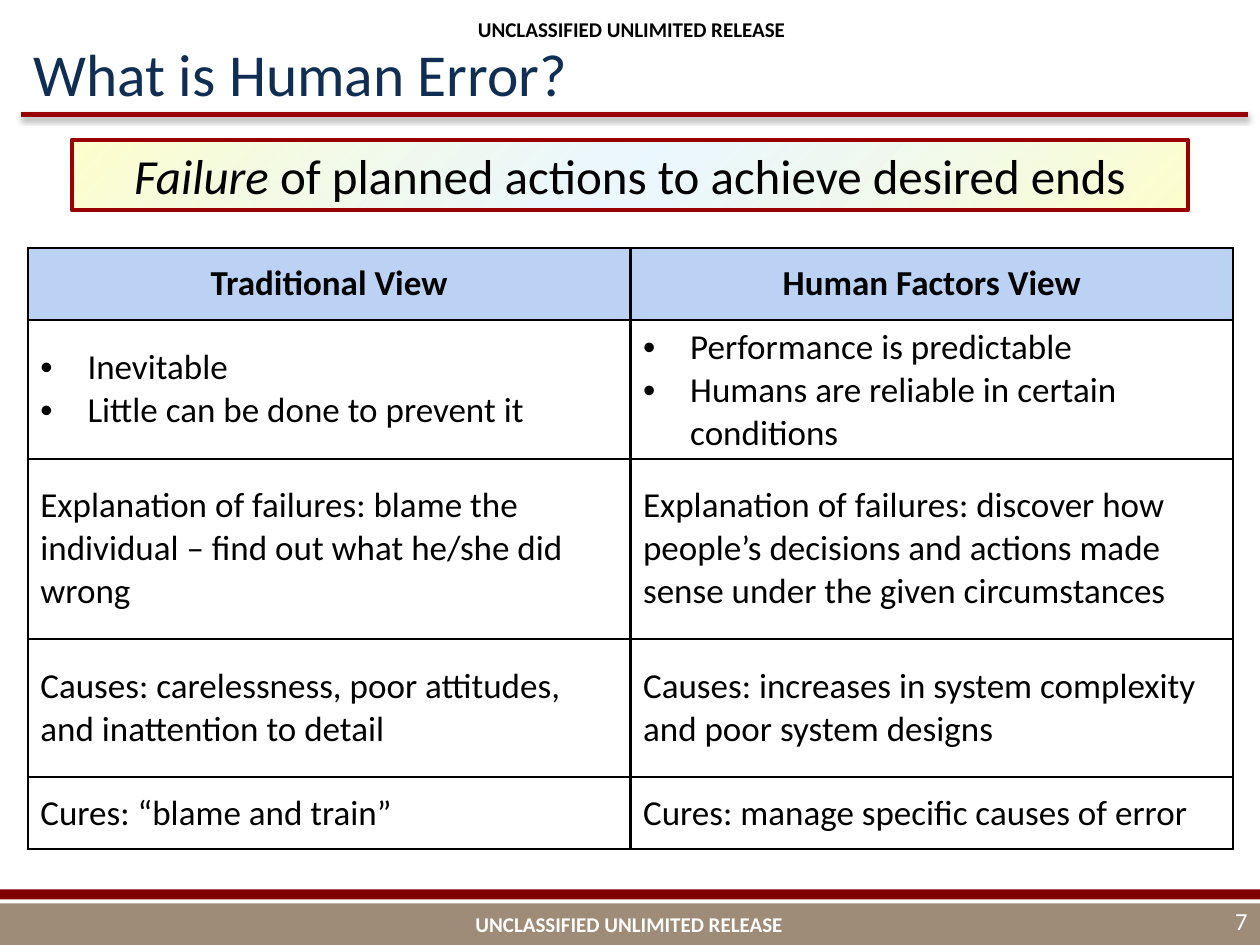
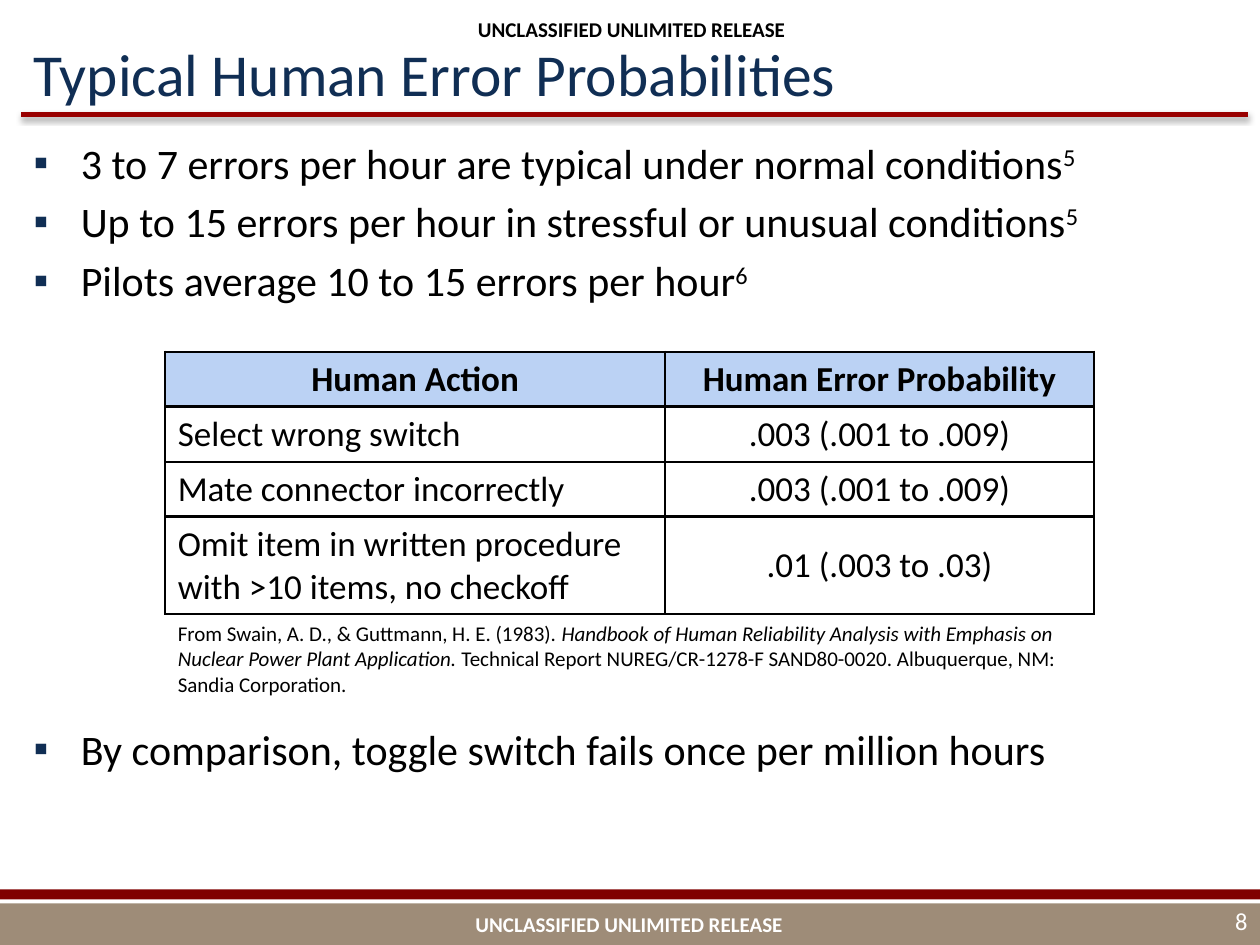
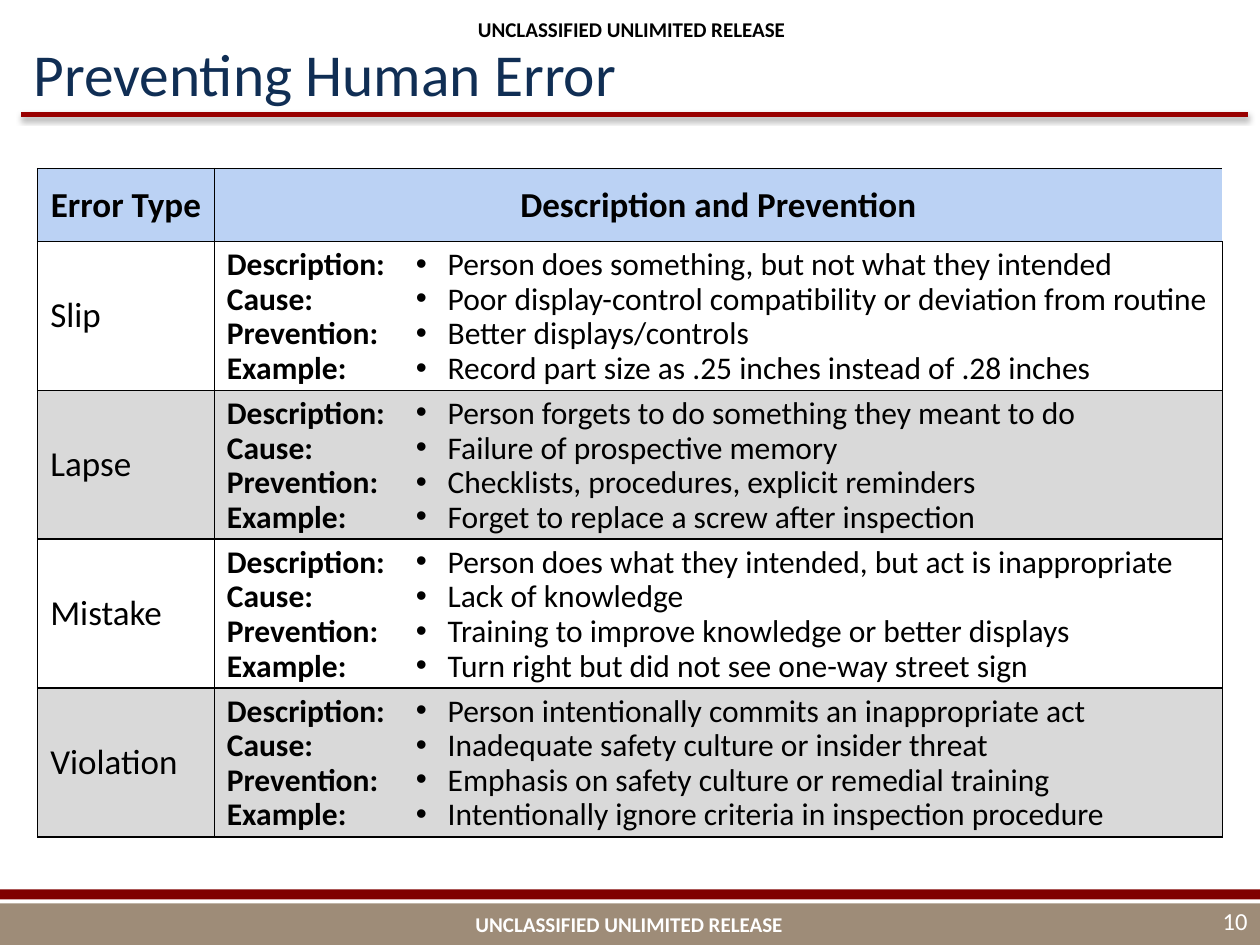
import dataclasses

import lxml.etree
import pptx
import pptx.dml.color
import pptx.enum.shapes
import pptx.enum.text
import pptx.oxml.ns
import pptx.util

Cm = pptx.util.Cm
Pt = pptx.util.Pt
ALIGN = pptx.enum.text.PP_ALIGN
ANCHOR = pptx.enum.text.MSO_ANCHOR
SHAPE = pptx.enum.shapes.MSO_SHAPE
EDGES = "LRTB"


@dataclasses.dataclass(frozen=True)
class Theme:
    """Hold the colours, font and type sizes of the deck."""
    font: str = "Calibri"
    navy: str = "102E54"
    black: str = "000000"
    white: str = "FFFFFF"
    tan: str = "9E8C78"
    maroon: str = "800000"
    red: str = "990000"
    header: str = "BBD2F4"
    gray: str = "D9D9D9"
    cream: str = "FFFFCC"
    sky: str = "E1F4FF"
    title: int = 34
    banner: int = 28
    body: int = 24
    table: int = 20
    detail: int = 18
    number: int = 14
    small: int = 12


THEME = Theme()
MIDDLE = {"alignment": ALIGN.CENTER}
RIGHT = {"alignment": ALIGN.RIGHT}
TIGHT = {"line_spacing": 0.9}
DOT = ("•", 0.95, THEME.black)
SMALL_DOT = ("•", 0.64, THEME.black)
SQUARE = ("▪", 0.95, THEME.navy)


def put(target, values):
    """Set each named attribute on the target."""
    for name, value in values.items():
        setattr(target, name, value)


def tint(code):
    """Turn a hex code into a colour."""
    return pptx.dml.color.RGBColor.from_string(code)


def add(parent, tag, **values):
    """Append a drawing element with its attributes."""
    values = {name: str(value) for name, value in values.items()}
    return lxml.etree.SubElement(parent, pptx.oxml.ns.qn("a:" + tag), values)


def look(size, ink=THEME.black, **extra):
    """Give the format values of a run."""
    return {"name": THEME.font, "size": Pt(size), "ink": ink, **extra}


def bullet(para, mark):
    """Give a paragraph a hanging bullet."""
    sign, indent, ink = mark
    props = para._p.get_or_add_pPr()
    props.set("marL", str(Cm(indent)))
    props.set("indent", str(-Cm(indent)))
    add(add(props, "buClr"), "srgbClr", val=ink)
    add(props, "buFont", typeface="Arial")
    add(props, "buChar", char=sign)


def write(frame, paras, style, layout=None, mark=None):
    """Write paragraphs, each a string or a list of (text, format) runs."""
    for index, runs in enumerate(paras):
        para = frame.add_paragraph() if index else frame.paragraphs[0]
        if mark:
            bullet(para, mark)
        put(para, layout or {})
        for text, extra in [(runs, {})] if isinstance(runs, str) else runs:
            run = para.add_run()
            run.text = text
            values = style | extra
            run.font.color.rgb = tint(values.pop("ink"))
            base = values.pop("base", 0)
            put(run.font, values)
            if base:
                run._r.get_or_add_rPr().set("baseline", str(base))


def label(slide, box, paras, style, layout=None, mark=None, **setup):
    """Add a wrapping text box."""
    frame = slide.shapes.add_textbox(*map(Cm, box)).text_frame
    put(frame, {"word_wrap": True, **setup})
    write(frame, paras, style, layout, mark)
    return frame


def band(slide, box, ink):
    """Add a plain filled bar."""
    shape = slide.shapes.add_shape(SHAPE.RECTANGLE, *map(Cm, box))
    shape.shadow.inherit = False
    shape.fill.solid()
    shape.fill.fore_color.rgb = tint(ink)
    shape.line.fill.background()


def rule(slide):
    """Draw the shadowed line under the title."""
    line = slide.shapes.add_connector(
        pptx.enum.shapes.MSO_CONNECTOR.STRAIGHT,
        Cm(0.43), Cm(2.31), Cm(25.15), Cm(2.31))
    line.line.color.rgb = tint(THEME.red)
    line.line.width = Pt(3)
    effects = add(line._element.spPr, "effectLst")
    shade = add(effects, "outerShdw", blurRad=Pt(3.1), dist=Pt(1.6),
                dir=5400000, rotWithShape=0)
    add(add(shade, "srgbClr", val=THEME.black), "alpha", val=38000)


def start(deck, title, number):
    """Add a slide with the shared bands, title and marks."""
    slide = deck.slides.add_slide(deck.slide_layouts[6])
    band(slide, (0, 18.21, 25.4, 0.84), THEME.tan)
    band(slide, (0, 17.93, 25.4, 0.2), THEME.maroon)
    rule(slide)
    label(slide, (0.43, 0.66, 24.71, 1.63), [title],
          look(THEME.title, THEME.navy), vertical_anchor=ANCHOR.MIDDLE)
    label(slide, (23.7, 18.14, 1.7, 1.04), [str(number)],
          look(THEME.number, THEME.white), RIGHT)
    for left, top, ink in ((9.04, 0.2, THEME.black),
                           (8.99, 18.26, THEME.white)):
        label(slide, (left, top, 7.39, 0.76),
              ["UNCLASSIFIED UNLIMITED RELEASE"],
              look(THEME.small, ink, bold=True), MIDDLE,
              auto_size=pptx.enum.text.MSO_AUTO_SIZE.SHAPE_TO_FIT_TEXT)
    return slide


def banner(slide, box, runs):
    """Add the framed statement with a diagonal gradient."""
    shape = slide.shapes.add_shape(SHAPE.RECTANGLE, *map(Cm, box))
    shape.shadow.inherit = False
    shape.line.color.rgb = tint(THEME.red)
    shape.line.width = Pt(2.25)
    shape.fill.gradient()
    blend = shape._element.spPr.find(pptx.oxml.ns.qn("a:gradFill"))
    for child in list(blend):
        blend.remove(child)
    stops = add(blend, "gsLst")
    for place, ink, alpha in ((0, THEME.cream, 100), (50, THEME.sky, 65),
                              (100, THEME.cream, 100)):
        stop = add(stops, "gs", pos=place * 1000)
        add(add(stop, "srgbClr", val=ink), "alpha", val=alpha * 1000)
    add(blend, "lin", ang=45 * 60000, scaled=1)
    shape.text_frame.word_wrap = True
    write(shape.text_frame, [runs], look(THEME.banner), MIDDLE)


def grid(slide, left, top, cols, rows):
    """Add an unstyled table with the given column and row sizes."""
    table = slide.shapes.add_table(
        len(rows), len(cols), Cm(left), Cm(top),
        Cm(sum(cols)), Cm(sum(rows))).table
    put(table, {"first_row": False, "horz_banding": False})
    for col, width in zip(table.columns, cols):
        col.width = Cm(width)
    for row, height in zip(table.rows, rows):
        row.height = Cm(height)
    return table


def border(cell, width, sides):
    """Draw the chosen sides of a cell and clear the rest."""
    props = cell._tc.get_or_add_tcPr()
    for edge in EDGES:
        line = add(props, "ln" + edge, w=Pt(width))
        if edge in sides:
            add(add(line, "solidFill"), "srgbClr", val=THEME.black)
        else:
            add(line, "noFill")


def enter(cell, paras, style, layout=None, mark=None, ink=None,
          width=1.5, sides=EDGES, anchor=ANCHOR.MIDDLE):
    """Fill in one table cell."""
    border(cell, width, sides)
    if ink:
        cell.fill.solid()
        cell.fill.fore_color.rgb = tint(ink)
    else:
        cell.fill.background()
    cell.vertical_anchor = anchor
    write(cell.text_frame, paras, style, layout, mark)


def head(cell, text, **setup):
    """Fill in one header cell."""
    enter(cell, [text] if text else [], look(THEME.table, bold=True), MIDDLE,
          ink=THEME.header, **setup)


def views(deck):
    """Build the slide that compares two views of error."""
    slide = start(deck, "What is Human Error?", 7)
    table = grid(slide, 0.56, 5, [12.15] * 2, [1.45, 2.79, 3.63, 2.79, 1.45])
    rows = [
        (["Inevitable", "Little can be done to prevent it"],
         ["Performance is predictable",
          "Humans are reliable in certain conditions"]),
        (["Explanation of failures: blame the individual – find out what "
          "he/she did wrong"],
         ["Explanation of failures: discover how people’s decisions and "
          "actions made sense under the given circumstances"]),
        (["Causes: carelessness, poor attitudes, and inattention to detail"],
         ["Causes: increases in system complexity and poor system designs"]),
        (["Cures: “blame and train”"],
         ["Cures: manage specific causes of error"]),
    ]
    for col, text in enumerate(("Traditional View", "Human Factors View")):
        head(table.cell(0, col), text)
    for row, pair in enumerate(rows, 1):
        for col, paras in enumerate(pair):
            enter(table.cell(row, col), paras, look(THEME.table),
                  mark=DOT if len(paras) > 1 else None)
    banner(slide, (1.45, 2.82, 22.5, 1.42),
           [("Failure ", {"italic": True}),
            ("of planned actions to achieve desired ends", {})])


def odds(deck):
    """Build the slide of typical error probabilities."""
    slide = start(deck, "Typical Human Error Probabilities", 8)
    facts = [
        [(text, {}), (note, {"base": 30000})] for text, note in (
            ("3 to 7 errors per hour are typical under normal conditions",
             "5"),
            ("Up to 15 errors per hour in stressful or unusual conditions",
             "5"),
            ("Pilots average 10 to 15 errors per hour", "6"))
    ]
    facts.append("By comparison, toggle switch fails once per million hours")
    frame = label(slide, (0.43, 2.64, 24.71, 15.01), facts,
                  look(THEME.body), mark=SQUARE)
    for para, gap in zip(frame.paragraphs[1:], (4.8, 4.8, 239)):
        para.space_before = Pt(gap)

    table = grid(slide, 3.33, 7.09, [10.08, 8.64],
                 [1.07, 1.12, 1.07, 1.96, 1.84])
    rows = [
        ("Select wrong switch", ".003 (.001 to .009)"),
        ("Mate connector incorrectly", ".003 (.001 to .009)"),
        ("Omit item in written procedure with >10 items, no checkoff",
         ".01 (.003 to .03)"),
    ]
    for col, text in enumerate(("Human Action", "Human Error Probability")):
        head(table.cell(0, col), text)
    for row, pair in enumerate(rows, 1):
        for col, text in enumerate(pair):
            enter(table.cell(row, col), [text], look(THEME.table),
                  MIDDLE if col else None)
    source = [
        ("From Swain, A. D., & Guttmann, H. E. (1983). ", {}),
        ("Handbook of Human Reliability Analysis with Emphasis on Nuclear "
         "Power Plant Application. ", {"italic": True}),
        ("Technical Report NUREG/CR-1278-F SAND80-0020. Albuquerque, NM: "
         "Sandia Corporation.", {}),
    ]
    table.cell(4, 0).merge(table.cell(4, 1))
    for col, paras in enumerate(([source], [])):
        enter(table.cell(4, col), paras, look(THEME.small), sides="T")


def kinds(deck):
    """Build the slide of error types and their prevention."""
    slide = start(deck, "Preventing Human Error", 10)
    table = grid(slide, 0.76, 3.4, [3.56, 3.81, 16.51], [1.47] + [3] * 4)
    topics = ["Description:", "Cause:", "Prevention:", "Example:"]
    types = {
        "Slip": ["Person does something, but not what they intended",
                 "Poor display-control compatibility or deviation from "
                 "routine",
                 "Better displays/controls",
                 "Record part size as .25 inches instead of .28 inches"],
        "Lapse": ["Person forgets to do something they meant to do",
                  "Failure of prospective memory",
                  "Checklists, procedures, explicit reminders",
                  "Forget to replace a screw after inspection"],
        "Mistake": ["Person does what they intended, but act is "
                    "inappropriate",
                    "Lack of knowledge",
                    "Training to improve knowledge or better displays",
                    "Turn right but did not see one-way street sign"],
        "Violation": ["Person intentionally commits an inappropriate act",
                      "Inadequate safety culture or insider threat",
                      "Emphasis on safety culture or remedial training",
                      "Intentionally ignore criteria in inspection "
                      "procedure"],
    }
    sides = (EDGES, "LTB", "RTB")
    table.cell(0, 1).merge(table.cell(0, 2))
    for col, text in enumerate(("Error Type", "Description and Prevention",
                                "")):
        head(table.cell(0, col), text, width=1, sides=sides[col])
    for row, (name, facts) in enumerate(types.items(), 1):
        columns = (
            ([name], look(THEME.table), None, None, ANCHOR.MIDDLE),
            (topics, look(THEME.detail, bold=True), TIGHT, None,
             ANCHOR.MIDDLE),
            (facts, look(THEME.detail), TIGHT, SMALL_DOT, ANCHOR.TOP),
        )
        for col, (paras, style, layout, mark, anchor) in enumerate(columns):
            enter(table.cell(row, col), paras, style, layout, mark,
                  ink=None if row % 2 else THEME.gray, width=1,
                  sides=sides[col], anchor=anchor)


def main():
    """Build and save the deck."""
    deck = pptx.Presentation()
    put(deck, {"slide_width": Cm(25.4), "slide_height": Cm(19.05)})
    for build in (views, odds, kinds):
        build(deck)
    deck.save("out.pptx")


if __name__ == "__main__":
    main()
